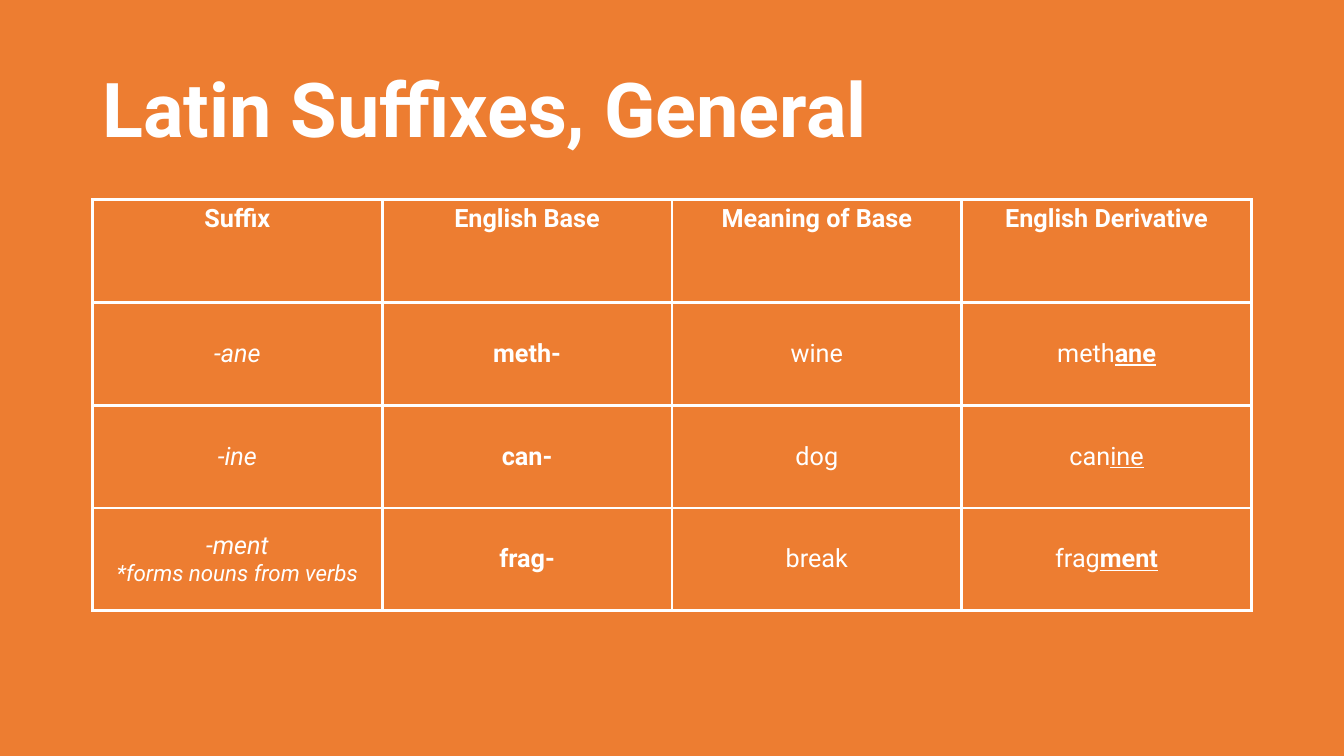
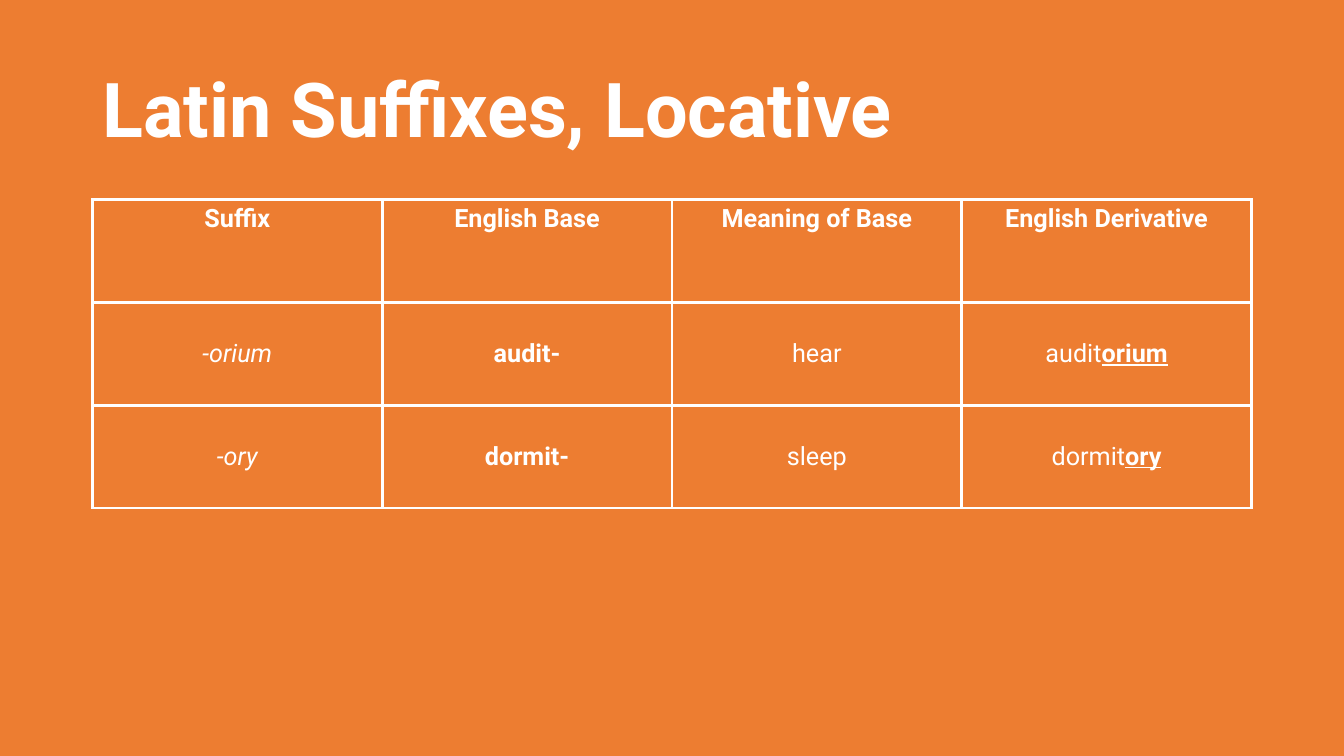
import dataclasses

import pptx
import pptx.dml.color
import pptx.enum.text
import pptx.oxml
import pptx.oxml.ns
import pptx.util
from pptx.util import Cm, Pt


@dataclasses.dataclass(frozen=True)
class Theme:
    background: str = "ED7D31"
    foreground: str = "FFFFFF"
    font: str = "Roboto"
    title_size: int = 54
    body_size: int = 18
    note_size: int = 16
    border_width: float = 2.25


@dataclasses.dataclass(frozen=True)
class Box:
    left: int
    top: int
    width: int
    height: int


THEME = Theme()
TITLE_BOX = Box(Cm(2.33), Cm(1.01), Cm(29.21), Cm(3.68))
TABLE_LEFT, TABLE_TOP, TABLE_WIDTH = Cm(2.33), Cm(5.03), Cm(29.21)
ROW_HEIGHT = Cm(2.59)
TITLE_ONLY_LAYOUT = 5
HEADERS = ("Suffix", "English Base", "Meaning of Base", "English Derivative")


@dataclasses.dataclass(frozen=True)
class Entry:
    suffix: str
    base: str
    meaning: str
    stem: str
    ending: str
    ending_bold: bool = True
    note: str = ""


SLIDES = {
    "Latin Suffixes, General": (
        Entry("-ane", "meth-", "wine", "meth", "ane"),
        Entry("-ine", "can-", "dog", "can", "ine", ending_bold=False),
        Entry("-ment", "frag-", "break", "frag", "ment",
              note="*forms nouns from verbs"),
    ),
    "Latin Suffixes, Locative": (
        Entry("-orium", "audit-", "hear", "audit", "orium"),
        Entry("-ory", "dormit-", "sleep", "dormit", "ory"),
    ),
}


def add_text(paragraph, text, size=THEME.body_size, bold=False, italic=False,
             underline=False):
    run = paragraph.add_run()
    run.text = text
    font = run.font
    font.name = THEME.font
    font.size = Pt(size)
    font.bold = bold
    font.italic = italic
    font.underline = underline
    font.color.rgb = pptx.dml.color.RGBColor.from_string(THEME.foreground)


def add_title(slide, text, box):
    title = slide.shapes.title
    title.left, title.top = box.left, box.top
    title.width, title.height = box.width, box.height
    frame = title.text_frame
    frame.word_wrap = True
    frame.auto_size = pptx.enum.text.MSO_AUTO_SIZE.NONE
    frame.vertical_anchor = pptx.enum.text.MSO_ANCHOR.MIDDLE
    paragraph = frame.paragraphs[0]
    paragraph.alignment = pptx.enum.text.PP_ALIGN.LEFT
    paragraph.line_spacing = 0.9
    add_text(paragraph, text, size=THEME.title_size, bold=True)


def set_borders(cell):
    properties = cell._tc.get_or_add_tcPr()
    for side in ("lnL", "lnR", "lnT", "lnB"):
        properties.append(pptx.oxml.parse_xml(
            f'<a:{side} {pptx.oxml.ns.nsdecls("a")} w="{Pt(THEME.border_width)}">'
            f'<a:solidFill><a:srgbClr val="{THEME.foreground}"/></a:solidFill>'
            f'</a:{side}>'))


def fill_cell(cell, *lines, anchor=pptx.enum.text.MSO_ANCHOR.MIDDLE):
    """Write lines, each a list of (text, format) runs, into a bordered cell."""
    set_borders(cell)
    cell.fill.background()
    cell.vertical_anchor = anchor
    frame = cell.text_frame
    for index, runs in enumerate(lines):
        paragraph = frame.add_paragraph() if index else frame.paragraphs[0]
        paragraph.alignment = pptx.enum.text.PP_ALIGN.CENTER
        for text, text_format in runs:
            add_text(paragraph, text, **text_format)


def add_suffix_table(slide, entries, box):
    table = slide.shapes.add_table(len(entries) + 1, len(HEADERS), box.left,
                                   box.top, box.width, box.height).table
    table.first_row = False
    table.horz_banding = False

    for column, header in enumerate(HEADERS):
        fill_cell(table.cell(0, column), [(header, {"bold": True})],
                  anchor=pptx.enum.text.MSO_ANCHOR.TOP)

    for row, entry in enumerate(entries, start=1):
        suffix_lines = [[(entry.suffix, {"italic": True})]]
        if entry.note:
            suffix_lines.append(
                [(entry.note, {"italic": True, "size": THEME.note_size})])
        ending_format = {"bold": entry.ending_bold, "underline": True}
        fill_cell(table.cell(row, 0), *suffix_lines)
        fill_cell(table.cell(row, 1), [(entry.base, {"bold": True})])
        fill_cell(table.cell(row, 2), [(entry.meaning, {})])
        fill_cell(table.cell(row, 3),
                  [(entry.stem, {}), (entry.ending, ending_format)])


def add_suffix_slide(presentation, title, entries):
    slide = presentation.slides.add_slide(
        presentation.slide_layouts[TITLE_ONLY_LAYOUT])
    add_title(slide, title, TITLE_BOX)
    table_height = ROW_HEIGHT * (len(entries) + 1)
    add_suffix_table(slide, entries,
                     Box(TABLE_LEFT, TABLE_TOP, TABLE_WIDTH, table_height))


def main():
    presentation = pptx.Presentation()
    presentation.slide_width = Cm(33.87)
    presentation.slide_height = Cm(19.05)
    background = presentation.slide_master.background.fill
    background.solid()
    background.fore_color.rgb = pptx.dml.color.RGBColor.from_string(
        THEME.background)
    for title, entries in SLIDES.items():
        add_suffix_slide(presentation, title, entries)
    presentation.save("out.pptx")


if __name__ == "__main__":
    main()
